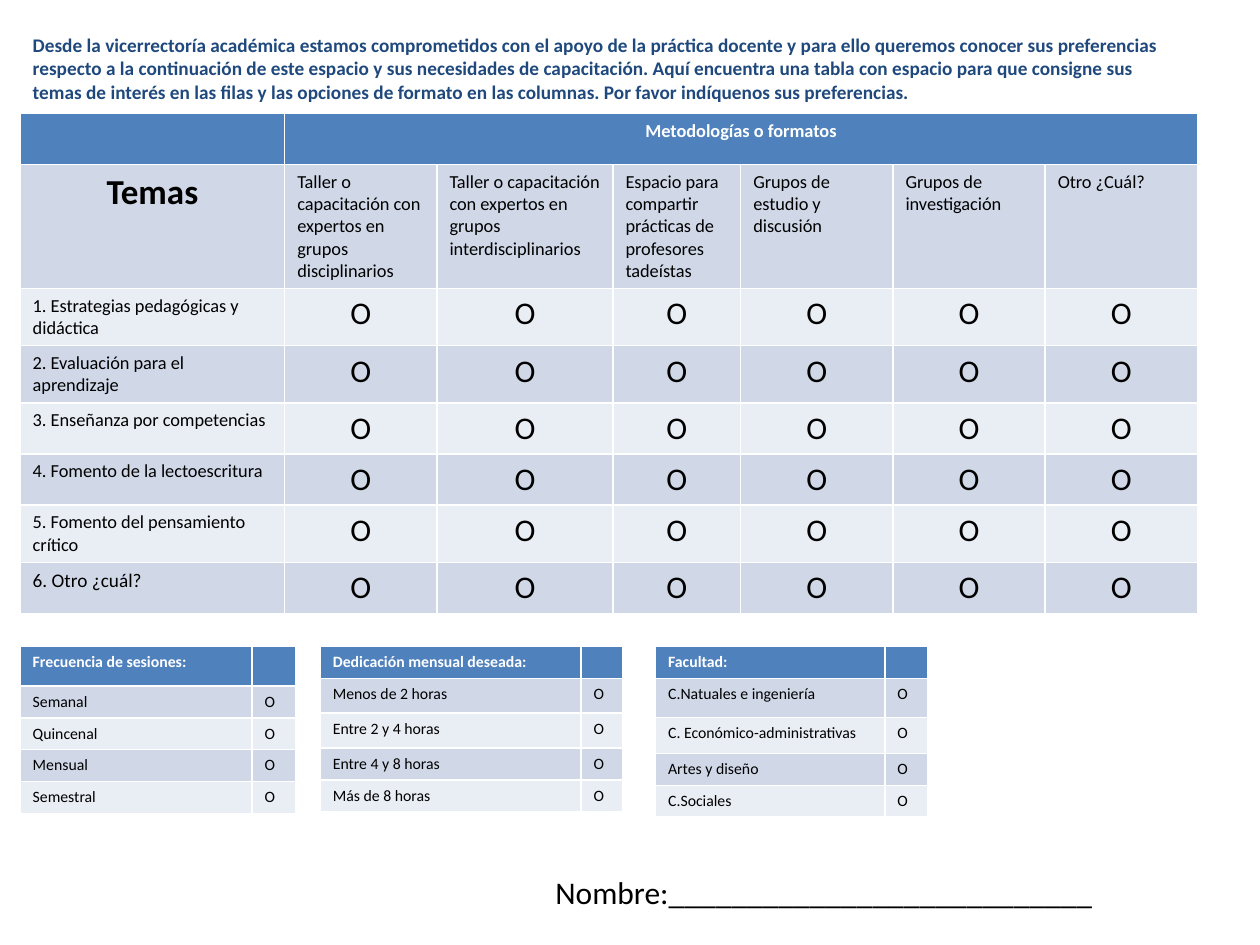
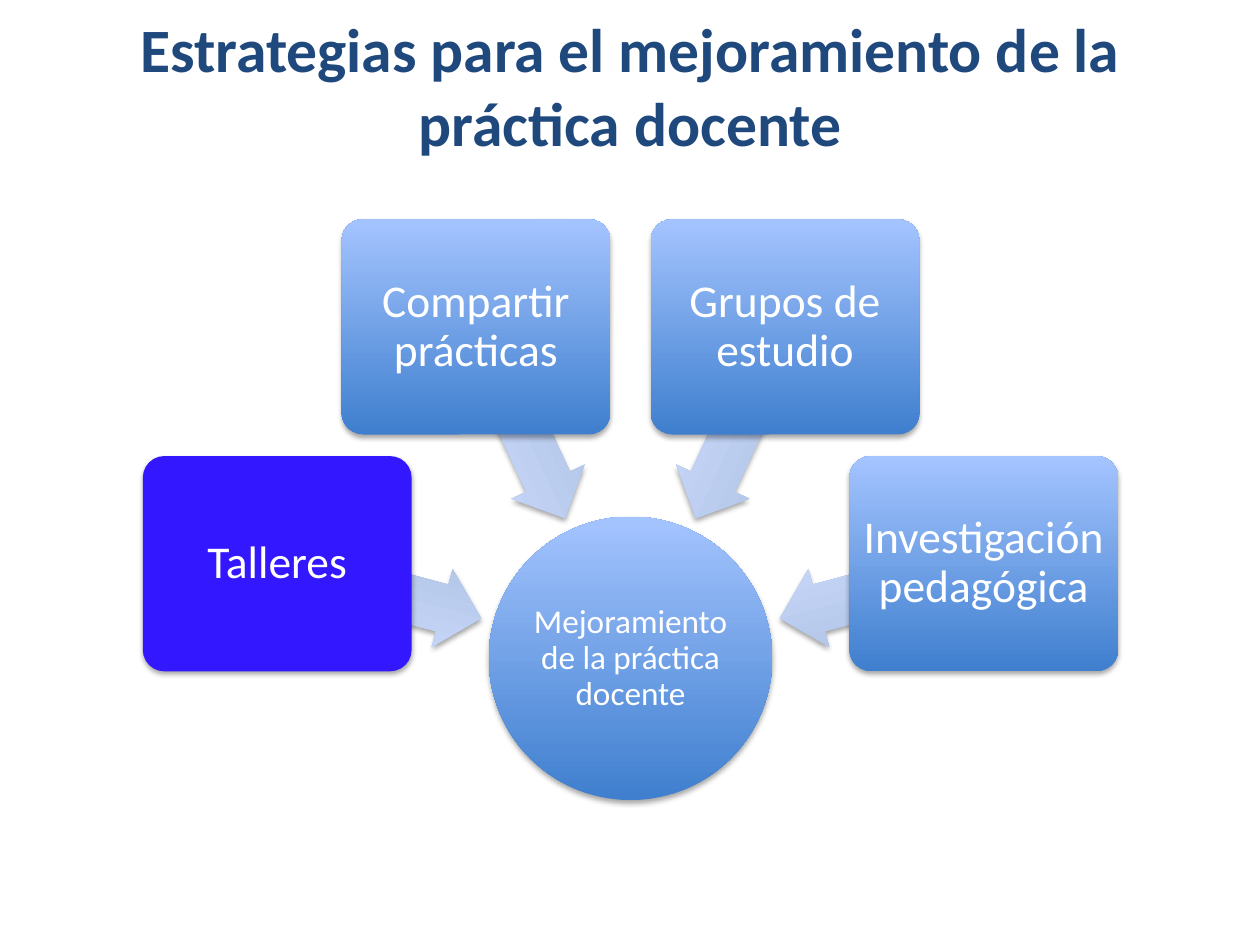
from math import cos, radians, sin

from lxml.etree import SubElement
from pptx import Presentation
from pptx.dml.color import RGBColor
from pptx.enum.shapes import MSO_SHAPE
from pptx.enum.text import MSO_ANCHOR, MSO_AUTO_SIZE, PP_ALIGN
from pptx.oxml.ns import qn
from pptx.util import Pt

FONT = "Calibri"
NAVY = RGBColor(0x1F, 0x49, 0x7D)
HEADER_BLUE = RGBColor(0x4F, 0x81, 0xBD)
BAND_DARK = RGBColor(0xD0, 0xD8, 0xE8)
BAND_LIGHT = RGBColor(0xE9, 0xED, 0xF4)
WHITE = RGBColor(0xFF, 0xFF, 0xFF)
BLACK = RGBColor(0x00, 0x00, 0x00)
VIVID_BLUE = RGBColor(0x32, 0x17, 0xFF)
BOX_GRADIENT = (RGBColor(0x3F, 0x7F, 0xCE), RGBColor(0xA4, 0xC4, 0xFF))
ARROW_GRADIENT = (RGBColor(0xAD, 0xBF, 0xE1), RGBColor(0xCC, 0xDD, 0xFF))


def write(frame, text, size, color=BLACK, bold=False, align=PP_ALIGN.LEFT, spacing=None):
    paragraph = frame.paragraphs[0]
    paragraph.alignment = align
    paragraph.line_spacing = spacing
    if not text:
        paragraph._p.get_or_add_endParaRPr().set("sz", str(size * 100))
        return
    run = paragraph.add_run()
    run.text = text
    run.font.name = FONT
    run.font.size = Pt(size)
    run.font.bold = bold
    run.font.color.rgb = color


def add_grid(slide, left, top, widths, heights):
    table = slide.shapes.add_table(len(heights), len(widths), Pt(left), Pt(top),
                                   Pt(sum(widths)), Pt(sum(heights))).table
    for column, width in zip(table.columns, widths):
        column.width = Pt(width)
    for index, (row, height) in enumerate(zip(table.rows, heights)):
        row.height = Pt(height)
        for cell in row.cells:
            cell.fill.solid()
            band = BAND_DARK if index % 2 else BAND_LIGHT
            cell.fill.fore_color.rgb = band if index else HEADER_BLUE
    return table


presentation = Presentation()
presentation.slide_width = Pt(720)
presentation.slide_height = Pt(540)

titles = [
    ("Desde la vicerrectoría académica estamos comprometidos con el apoyo de la práctica docente "
     "y para ello queremos conocer sus preferencias respecto a la continuación de este espacio y "
     "sus necesidades de capacitación. Aquí encuentra una tabla con espacio para que consigne sus "
     "temas de interés en las filas y las opciones de formato en las columnas. Por favor "
     "indíquenos sus preferencias.", 11, PP_ALIGN.LEFT, (11.5, 1.5, 672, 75)),
    ("Estrategias para el mejoramiento de la práctica docente", 35.2, PP_ALIGN.CENTER,
     (36, 17.3, 648, 62.6)),
]
slides = []
for text, size, align, (left, top, width, height) in titles:
    slide = presentation.slides.add_slide(presentation.slide_layouts[5])
    title = slide.shapes.title
    title.left, title.top, title.width, title.height = Pt(left), Pt(top), Pt(width), Pt(height)
    title.text_frame.auto_size = MSO_AUTO_SIZE.NONE
    title.text_frame.vertical_anchor = MSO_ANCHOR.MIDDLE
    write(title.text_frame, text, size, NAVY, True, align)
    slides.append(slide)
survey_slide, strategy_slide = slides

formats = [
    "Taller o capacitación con expertos en grupos disciplinarios",
    "Taller o capacitación con expertos en grupos interdisciplinarios",
    "Espacio para compartir prácticas de profesores tadeístas",
    "Grupos de estudio y discusión",
    "Grupos de investigación",
    "Otro ¿Cuál?",
]
topics = [
    ("1. Estrategias pedagógicas y didáctica", 10.5),
    ("2. Evaluación para el aprendizaje", 10.5),
    ("3. Enseñanza por competencias", 10.5),
    ("4. Fomento de la lectoescritura", 10.5),
    ("5. Fomento del pensamiento crítico", 10.5),
    ("6. Otro ¿cuál?", 11),
]
table = add_grid(survey_slide, 11.5, 64.8, [151.2, 87, 100.6, 73, 87, 87, 87],
                 [29.2, 67] + [29.2] * len(topics))
table.cell(0, 1).merge(table.cell(0, len(formats)))
write(table.cell(0, 1).text_frame, "Metodologías o formatos", 10.5, WHITE, True, PP_ALIGN.CENTER)
write(table.cell(1, 0).text_frame, "Temas", 20, bold=True, align=PP_ALIGN.CENTER)
for column, text in enumerate(formats, 1):
    write(table.cell(1, column).text_frame, text, 10.5)
for row, (topic, size) in enumerate(topics, 2):
    write(table.cell(row, 0).text_frame, topic, size)
    for column in range(1, len(formats) + 1):
        write(table.cell(row, column).text_frame, "O", 18, align=PP_ALIGN.CENTER)

questions = [
    (374.6, [131, 24.5], [17.6, 22.4, 20.6, 17.6, 17.6],
     ["Facultad:", "C.Natuales e ingeniería", "C. Económico-administrativas",
      "Artes y diseño", "C.Sociales"]),
    (183, [149, 24], [15.5, 20, 20, 15.5, 15.5],
     ["Dedicación mensual deseada:", "Menos de 2 horas", "Entre 2 y 4 horas",
      "Entre 4 y 8 horas", "Más de 8 horas"]),
    (11.5, [132.5, 25], [22.7, 14.6, 14.6, 14.6, 14.6],
     ["Frecuencia de sesiones:", "Semanal", "Quincenal", "Mensual", "Semestral"]),
]
for left, widths, heights, labels in questions:
    table = add_grid(survey_slide, left, 369.4, widths, heights)
    for row, label in enumerate(labels):
        write(table.cell(row, 0).text_frame, label, 9, BLACK if row else WHITE, row == 0)
        write(table.cell(row, 1).text_frame, "O" if row else "", 9)

name_box = survey_slide.shapes.add_textbox(Pt(310.3), Pt(495.4), Pt(443), Pt(29))
name_box.text_frame.word_wrap = True
write(name_box.text_frame, "Nombre:" + "_" * 27, 18)

HUB_X, HUB_Y = 360.3, 376.2
ARROW_RADIUS, BOX_RADIUS = 148.4, 209
strategies = [
    (195, "Talleres"),
    (245, "Compartir prácticas"),
    (295, "Grupos de estudio"),
    (345, "Investigación pedagógica"),
]
figures = [(MSO_SHAPE.OVAL, 0, 0, 162, 162, [], BOX_GRADIENT,
            "Mejoramiento de la práctica docente", 19, 0.7)]
for angle, text in strategies:
    figures.append((MSO_SHAPE.LEFT_ARROW, angle, ARROW_RADIUS, 120, 46, [0.6, 0.5],
                    ARROW_GRADIENT, "", 18, 0))
    figures.append((MSO_SHAPE.ROUNDED_RECTANGLE, angle, BOX_RADIUS, 153.6, 123, [0.1],
                    VIVID_BLUE if text == "Talleres" else BOX_GRADIENT, text, 26, 3.6))

for kind, angle, radius, width, height, adjustments, paint, text, size, inset in figures:
    center_x = HUB_X + radius * cos(radians(angle))
    center_y = HUB_Y + radius * sin(radians(angle))
    shape = strategy_slide.shapes.add_shape(kind, Pt(center_x - width / 2),
                                            Pt(center_y - height / 2), Pt(width), Pt(height))
    for index, value in enumerate(adjustments):
        shape.adjustments[index] = value
    if kind == MSO_SHAPE.LEFT_ARROW:
        shape.rotation = angle
    if paint == VIVID_BLUE:
        shape.fill.solid()
        shape.fill.fore_color.rgb = paint
    else:
        shape.fill.gradient()
        shape.fill.gradient_angle = 90
        for stop, color in zip(shape.fill.gradient_stops, paint):
            stop.color.rgb = color
    shape.line.fill.background()

    shape.shadow.inherit = False
    effects = shape._element.spPr.find(qn("a:effectLst"))
    shadow = SubElement(effects, qn("a:outerShdw"), blurRad=str(Pt(3.1)), dist=str(Pt(1.8)),
                        dir="5400000", rotWithShape="0")
    shadow_color = SubElement(shadow, qn("a:srgbClr"), val=str(BLACK))
    SubElement(shadow_color, qn("a:alpha"), val="35000")

    if text:
        frame = shape.text_frame
        frame.word_wrap = True
        frame.vertical_anchor = MSO_ANCHOR.MIDDLE
        frame.margin_left = frame.margin_right = Pt(inset)
        frame.margin_top = frame.margin_bottom = Pt(inset)
        write(frame, text, size, WHITE, align=PP_ALIGN.CENTER, spacing=0.9)

presentation.save("out.pptx")
